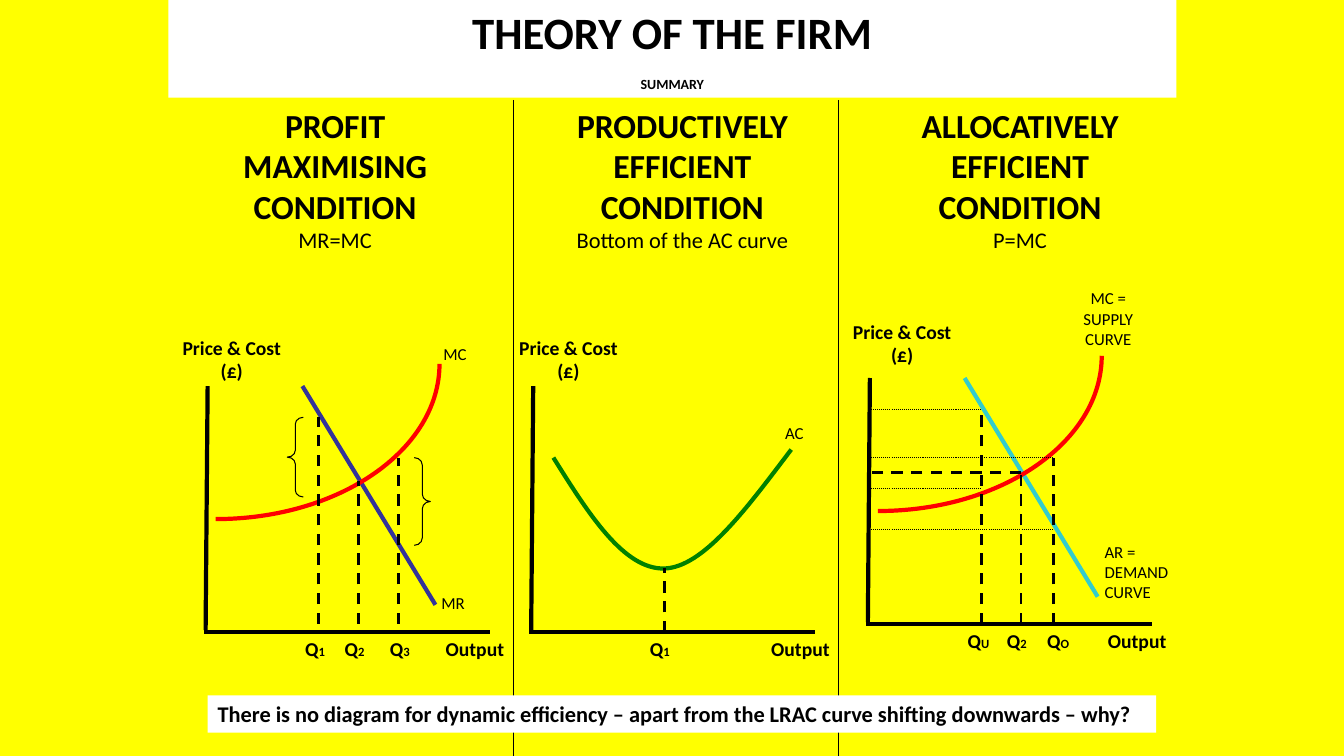
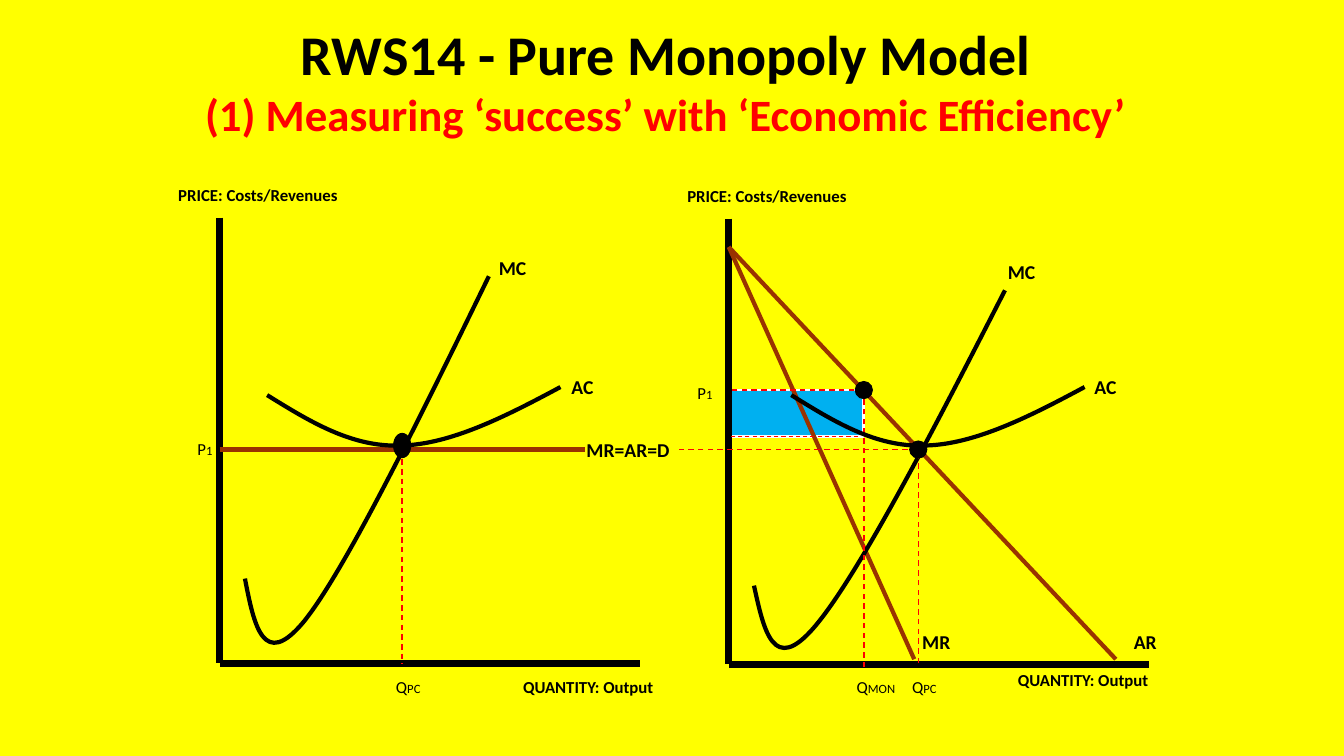
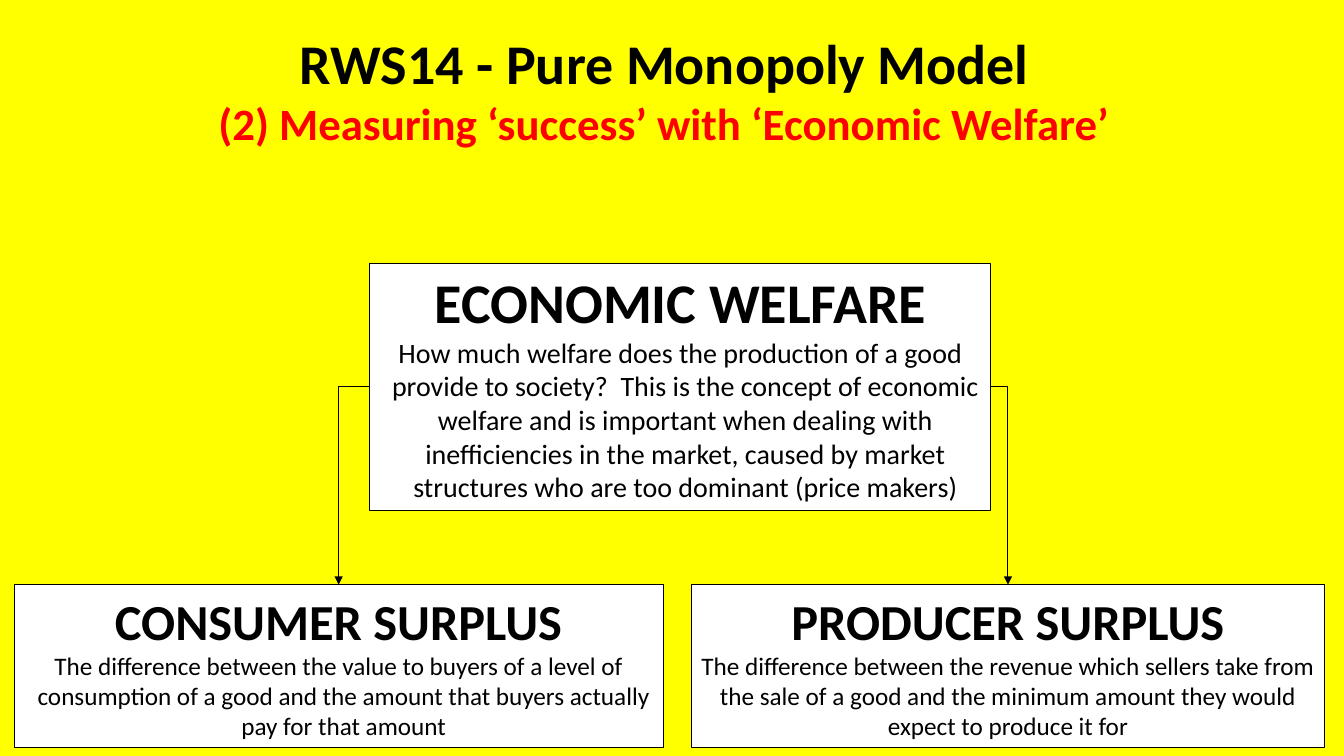
"""Build three economics slides on the theory of the firm and pure monopoly."""
from lxml import etree
from pptx import Presentation
from pptx.dml.color import RGBColor
from pptx.enum.dml import MSO_LINE
from pptx.enum.shapes import MSO_CONNECTOR, MSO_SHAPE
from pptx.enum.text import MSO_ANCHOR, MSO_AUTO_SIZE, PP_ALIGN
from pptx.oxml.ns import qn
from pptx.util import Inches, Pt

LEFT, CENTER, RIGHT = PP_ALIGN.LEFT, PP_ALIGN.CENTER, PP_ALIGN.RIGHT
TOP = MSO_ANCHOR.TOP
GROW = MSO_AUTO_SIZE.SHAPE_TO_FIT_TEXT
DASH, DOT = MSO_LINE.DASH, MSO_LINE.ROUND_DOT
STRAIGHT, ELBOW = MSO_CONNECTOR.STRAIGHT, MSO_CONNECTOR.ELBOW
RECTANGLE, OVAL = MSO_SHAPE.RECTANGLE, MSO_SHAPE.OVAL
LEFT_BRACE, RIGHT_BRACE = MSO_SHAPE.LEFT_BRACE, MSO_SHAPE.RIGHT_BRACE

FONT = "Calibri"
YELLOW = RGBColor(0xFF, 0xFF, 0x00)
WHITE = RGBColor(0xFF, 0xFF, 0xFF)
BLACK = RGBColor(0, 0, 0)
RED = RGBColor(0xFF, 0, 0)
INDIGO = RGBColor(0x33, 0x33, 0x99)
TURQUOISE = RGBColor(0x33, 0xCC, 0xCC)
GREEN = RGBColor(0, 0x80, 0)
BROWN = RGBColor(0x99, 0x33, 0)
BLUE = RGBColor(0, 0xB0, 0xF0)

WIDTH, HEIGHT = 40 / 3, 7.5
COLUMN_TOP = 0.99
DIVIDERS = [5.09, 8.32]

CONDITIONS = [
    ("PROFIT MAXIMISING CONDITION", "MR=MC", 2.26, 2.13),
    ("PRODUCTIVELY EFFICIENT CONDITION", "Bottom of the AC curve", 5.56, 2.42),
    ("ALLOCATIVELY EFFICIENT CONDITION", "P=MC", 8.87, 2.5),
]
CLOSING = ("There is no diagram for dynamic efficiency – apart from the LRAC "
           "curve shifting downwards – why?")

RISING_COST = [(0.1, -1.12), (1.33, -1.12), (2.32, -1.81), (2.32, -2.66)]
AVERAGE_COST = [(0.22, -1.73), (0.57, -1.17), (0.92, -0.62), (1.32, -0.63),
                (1.71, -0.64), (2.14, -1.23), (2.58, -1.81)]
FALLING_LINE = [(0.96, -2.44), (2.28, -0.27)]

FIRM_DIAGRAMS = [
    {"origin": (2.04, 6.27), "price": (-0.37, -2.99),
     "curve": (RISING_COST, RED), "falling": INDIGO,
     "labels": [("MR", 2.24, -0.44, 0.44, 0.3, LEFT),
                ("MC", 2.26, -2.91, 0.44, 0.3, LEFT)],
     "quantities": [("1", 1.12, -2.13, 0.89, 0.4), ("2", 1.52, -1.5, 1.28, 0.4),
                    ("3", 1.91, -1.73, 1.73, 0.4)],
     "foot": -0.08, "dotted": [],
     "braces": [(LEFT_BRACE, 0.81, -2.13, 0.79, 0.42),
                (RIGHT_BRACE, 2.07, -1.73, 0.87, 0.46)]},
    {"origin": (5.27, 6.27), "price": (-0.26, -2.99),
     "curve": (AVERAGE_COST, GREEN), "falling": None,
     "labels": [("AC", 2.42, -2.13, 0.39, 0.3, LEFT)],
     "quantities": [("1", 1.32, -0.63, 1.08, 0.4)],
     "foot": 0, "dotted": [], "braces": []},
    {"origin": (8.61, 6.19), "price": (-0.29, -3.07),
     "curve": (RISING_COST, RED), "falling": TURQUOISE,
     "labels": [("AR = DEMAND CURVE", 2.25, -0.87, 0.93, 0.71, LEFT),
                ("MC = SUPPLY CURVE", 1.99, -3.38, 0.79, 0.71, CENTER)],
     "quantities": [("U", 1.13, -2.13, 0.89, 0.42), ("2", 1.52, -1.5, 1.28, 0.4),
                    ("O", 1.84, -1.65, 1.68, 0.42)],
     "foot": 0, "braces": [],
     "dotted": [(1.13, -2.13), (1.84, -0.94), (1.84, -1.65), (1.13, -1.34)]},
]

BOWL = [(0, 0), (0.42, 0.26), (0.84, 0.52), (1.33, 0.5),
        (1.82, 0.49), (2.37, 0.21), (2.91, -0.08)]
MARKET_DIAGRAMS = [
    {"origin": (2.18, 6.58), "bowl": (0.47, -2.66), "output": (2.91, 0.08),
     "marginal": [(0.25, -0.84), (0.34, -0.38), (0.43, 0.08), (0.84, -0.42),
                  (1.24, -0.92), (1.96, -2.38), (2.67, -3.84)],
     "block": None,
     "brown": [((0, -2.12), (3.62, -2.12))],
     "guides": [((1.81, -2.12), (1.81, 0.01), 1)],
     "dots": [(1.81, -2.16, 0.24)],
     "labels": [("MC", 2.67, -4.09, 0.48, False), ("AC", 3.39, -2.91, 0.43, False),
                ("MR=AR=D", 3.54, -2.28, 1.26, True)],
     "marks": [("Q", "PC", 1.65, 0.08, 0.46), ("P", "1", -0.32, -2.28, 0.35)]},
    {"origin": (7.23, 6.59), "bowl": (0.62, -2.67), "output": (2.77, 0.01),
     "marginal": [(0.25, -0.78), (0.35, -0.33), (0.44, 0.11), (0.85, -0.37),
                  (1.27, -0.86), (2.01, -2.28), (2.74, -3.71)],
     "block": (0, -2.72, 1.34, 0.46),
     "brown": [((0, -4.14), (3.84, -0.05)), ((0, -4.14), (1.84, -0.05))],
     "guides": [((1.34, 0.03), (1.34, -2.72), 1), ((1.34, -2.72), (0, -2.72), 1),
                ((1.28, -2.26), (0, -2.26), 0.75), ((1.88, -0.01), (1.88, -2.13), 1),
                ((1.87, -2.13), (-0.49, -2.13), 1)],
     "dots": [(1.34, -2.72, 0.17), (1.88, -2.13, 0.17)],
     "labels": [("MC", 2.67, -4.06, 0.48, False), ("AC", 3.53, -2.92, 0.43, False),
                ("MR", 1.82, -0.39, 0.52, True), ("AR", 3.92, -0.39, 0.52, True)],
     "marks": [("Q", "MON", 1.17, 0.07, 0.59), ("Q", "PC", 1.72, 0.07, 0.46),
               ("P", "1", -0.41, -2.84, 0.35)]},
]

TITLE = "RWS14 - Pure Monopoly Model"
EFFICIENCY = ("(1) Measuring ‘success’ with ‘Economic Efficiency’", (1.05, 0.12, 11.11, 1.25))
WELFARE = ("(2) Measuring ‘success’ with ‘Economic Welfare’", (0.27, 0.21, 12.64, 1.25))

WELFARE_BOXES = [
    ("CONSUMER SURPLUS", 36,
     "The difference between the value to buyers of a level of consumption of a good "
     "and the amount that buyers actually pay for that amount",
     18, (0.14, 5.8, 6.44, 1.62), 0.1),
    ("PRODUCER SURPLUS", 36,
     "The difference between the revenue which sellers take from the sale of a good "
     "and the minimum amount they would expect to produce it for",
     18, (6.86, 5.8, 6.28, 1.62), 0),
    ("ECONOMIC WELFARE", 40,
     "How much welfare does the production of a good provide to society?  This is the "
     "concept of economic welfare and is important when dealing with inefficiencies in "
     "the market, caused by market structures who are too dominant (price makers)",
     20, (3.67, 2.61, 6.16, 2.46), 0.1),
]
WELFARE_ARROWS = [((3.67, 3.83), (3.36, 5.8)), ((9.83, 3.83), (10, 5.8))]


def shift(origin, point):
    return origin[0] + point[0], origin[1] + point[1]


def add_span(para, text, size, bold, color):
    span = para.add_run()
    span.text = text
    span.font.name = FONT
    span.font.size = Pt(size)
    span.font.bold = bold
    span.font.color.rgb = color


def write(box, paragraphs, align=LEFT, wrap=True, before=0, hanging=0):
    """Fill a box with paragraphs given as lists of (text, size, bold, colour)."""
    frame = box.text_frame
    frame.word_wrap = wrap
    frame.auto_size = GROW
    frame.vertical_anchor = TOP
    for index, spans in enumerate(paragraphs):
        para = frame.add_paragraph() if index else frame.paragraphs[0]
        para.alignment = align
        if index and before:
            para.space_before = Pt(before)
        if hanging:
            properties = para._p.get_or_add_pPr()
            properties.set("marL", str(Inches(hanging)))
            properties.set("indent", str(-Inches(hanging)))
        for span in spans:
            add_span(para, *span)


def add_label(page, area, paragraphs, **style):
    box = page.shapes.add_textbox(*map(Inches, area))
    write(box, paragraphs, **style)


def style_outline(shape, color, weight):
    shape.line.color.rgb = color
    shape.line.width = Pt(weight)


def add_block(page, kind, area, fill=None, outline=None, weight=0.75):
    shape = page.shapes.add_shape(kind, *map(Inches, area))
    shape.shadow.inherit = False
    if fill is None:
        shape.fill.background()
    else:
        shape.fill.solid()
        shape.fill.fore_color.rgb = fill
    if outline is None:
        shape.line.fill.background()
    else:
        style_outline(shape, outline, weight)
    return shape


def add_line(page, start, end, color=BLACK, weight=0.75, dash=None, kind=STRAIGHT):
    line = page.shapes.add_connector(kind, *map(Inches, (*start, *end)))
    style_outline(line, color, weight)
    if dash is not None:
        line.line.dash_style = dash
    etree.SubElement(line._element.spPr, qn("a:effectLst"))
    return line


def add_corner_arrow(page, start, end):
    arrow = add_line(page, start, end, kind=ELBOW)
    properties = arrow._element.spPr
    properties.find(qn("a:prstGeom")).set("prst", "bentConnector2")
    etree.SubElement(properties.find(qn("a:ln")), qn("a:tailEnd"), type="triangle")


def add_curve(page, origin, controls, color):
    """Draw cubic segments through a start point and triples of control points."""
    points = [tuple(map(Inches, shift(origin, point))) for point in controls]
    builder = page.shapes.build_freeform(*points[0])
    builder.add_line_segments(points[1:], close=False)
    curve = builder.convert_to_shape()
    curve.shadow.inherit = False
    curve.fill.background()
    style_outline(curve, color, 3)
    outline = next(curve._element.iter(qn("a:moveTo"))).getparent()
    straights = outline.findall(qn("a:lnTo"))
    for first in range(0, len(straights), 3):
        cubic = etree.SubElement(outline, qn("a:cubicBezTo"))
        for straight in straights[first:first + 3]:
            cubic.append(straight[0])
            outline.remove(straight)


def add_title(page, subtitle, area):
    box = page.shapes.add_textbox(*map(Inches, area))
    frame = box.text_frame
    frame.word_wrap = True
    frame.margin_top = Inches(0.07)
    para = frame.paragraphs[0]
    para.alignment = CENTER
    add_span(para, TITLE, 40, True, BLACK)
    para.add_line_break()
    add_span(para, subtitle, 32, True, RED)


def draw_firm_diagram(page, diagram):
    origin = diagram["origin"]

    def line(start, end, *style):
        add_line(page, shift(origin, start), shift(origin, end), *style)

    def label(x, y, width, height, spans, align=LEFT, wrap=True):
        add_label(page, (*shift(origin, (x, y)), width, height), [spans],
                  align=align, wrap=wrap)

    line((0.02, -2.44), (0, -0.02), BLACK, 3)
    line((-0.02, 0), (2.82, 0), BLACK, 3)
    label(2.11, 0, 0.95, 0.33, [("Output", 14, True, BLACK)], RIGHT)
    label(*diagram["price"], 1.26, 0.57, [("Price & Cost (£)", 14, True, BLACK)], CENTER)
    if diagram["falling"] is not None:
        line(*FALLING_LINE, diagram["falling"], 3)
    add_curve(page, origin, *diagram["curve"])
    for mark, x, top, text_x, width in diagram["quantities"]:
        line((x, diagram["foot"]), (x, top), BLACK, 2, DASH)
        label(text_x, 0, width, 0.34, [("Q", 14, True, BLACK), (mark, 9, True, BLACK)],
              wrap=False)
    for x, y in diagram["dotted"]:
        line((0.03, y), (x, y), BLACK, 0.75, DOT)
    if diagram["dotted"]:
        line((1.52, -1.5), (0.03, -1.5), BLACK, 2, DASH)
    for kind, x, y, height, bend in diagram["braces"]:
        brace = add_block(page, kind, (*shift(origin, (x, y)), 0.16, height), outline=BLACK)
        brace.adjustments[0] = bend
    for text, x, y, width, height, align in diagram["labels"]:
        label(x, y, width, height, [(text, 12, False, BLACK)], align, " " in text)


def draw_market_diagram(page, diagram):
    origin = diagram["origin"]

    def line(start, end, *style):
        add_line(page, shift(origin, start), shift(origin, end), *style)

    def label(x, y, width, height, *spans, wrap=False):
        add_label(page, (*shift(origin, (x, y)), width, height), [spans], wrap=wrap)

    if diagram["block"]:
        x, y, width, height = diagram["block"]
        add_block(page, RECTANGLE, (*shift(origin, (x, y)), width, height), BLUE, WHITE, 2)
    line((0, -4.42), (0, 0), BLACK, 5)
    line((0, 0), (4.17, 0), BLACK, 5)
    for start, end in diagram["brown"]:
        line(start, end, BROWN, 3)
    add_curve(page, origin, diagram["marginal"], BLACK)
    for start, end, weight in diagram["guides"]:
        line(start, end, RED, weight, DASH)
    add_curve(page, shift(origin, diagram["bowl"]), BOWL, BLACK)
    for x, y, height in diagram["dots"]:
        corner = shift(origin, (x - 0.17 / 2, y - height / 2))
        add_block(page, OVAL, (*corner, 0.17, height), BLACK, BLACK)
    label(-0.51, -4.8, 1.8, 0.3, ("PRICE: Costs/Revenues", 12, True, BLACK))
    label(*diagram["output"], 1.51, 0.3, ("QUANTITY: Output", 12, True, BLACK))
    for text, x, y, width, wrap in diagram["labels"]:
        label(x, y, width, 0.33, (text, 14, True, BLACK), wrap=wrap)
    for letter, mark, x, y, width in diagram["marks"]:
        label(x, y, width, 0.3, (letter, 12, False, BLACK), (mark, 9, False, BLACK))


def build_summary(page):
    header = add_block(page, RECTANGLE, (1.67, 0, 10, 0.97), WHITE)
    write(header, [[("THEORY OF THE FIRM", 32, True, BLACK)],
                   [("SUMMARY", 10, True, BLACK)]], align=CENTER, before=12)
    for heading, rule, x, width in CONDITIONS:
        add_label(page, (x, COLUMN_TOP, width, 1.58),
                  [[(heading, 24, True, BLACK)], [(rule, 16, False, BLACK)]], align=CENTER)
    for x in DIVIDERS:
        add_line(page, (x, COLUMN_TOP), (x, HEIGHT))
    for diagram in FIRM_DIAGRAMS:
        draw_firm_diagram(page, diagram)
    footer = add_block(page, RECTANGLE, (2.06, 6.9, 9.41, 0.37), WHITE)
    write(footer, [[(CLOSING, 16, True, BLACK)]])


def build_efficiency(page):
    for diagram in reversed(MARKET_DIAGRAMS):
        draw_market_diagram(page, diagram)
    add_title(page, *EFFICIENCY)


def build_welfare(page):
    for heading, heading_size, body, body_size, area, hanging in WELFARE_BOXES:
        box = add_block(page, RECTANGLE, area, WHITE, BLACK)
        write(box, [[(heading, heading_size, True, BLACK)],
                    [(body, body_size, False, BLACK)]], align=CENTER, hanging=hanging)
    for start, end in WELFARE_ARROWS:
        add_corner_arrow(page, start, end)
    add_title(page, *WELFARE)


def main():
    deck = Presentation()
    deck.slide_width, deck.slide_height = Inches(WIDTH), Inches(HEIGHT)
    backdrop = deck.slide_master.background.fill
    backdrop.solid()
    backdrop.fore_color.rgb = YELLOW
    for build in (build_summary, build_efficiency, build_welfare):
        build(deck.slides.add_slide(deck.slide_layouts[6]))
    deck.save("out.pptx")


if __name__ == "__main__":
    main()
